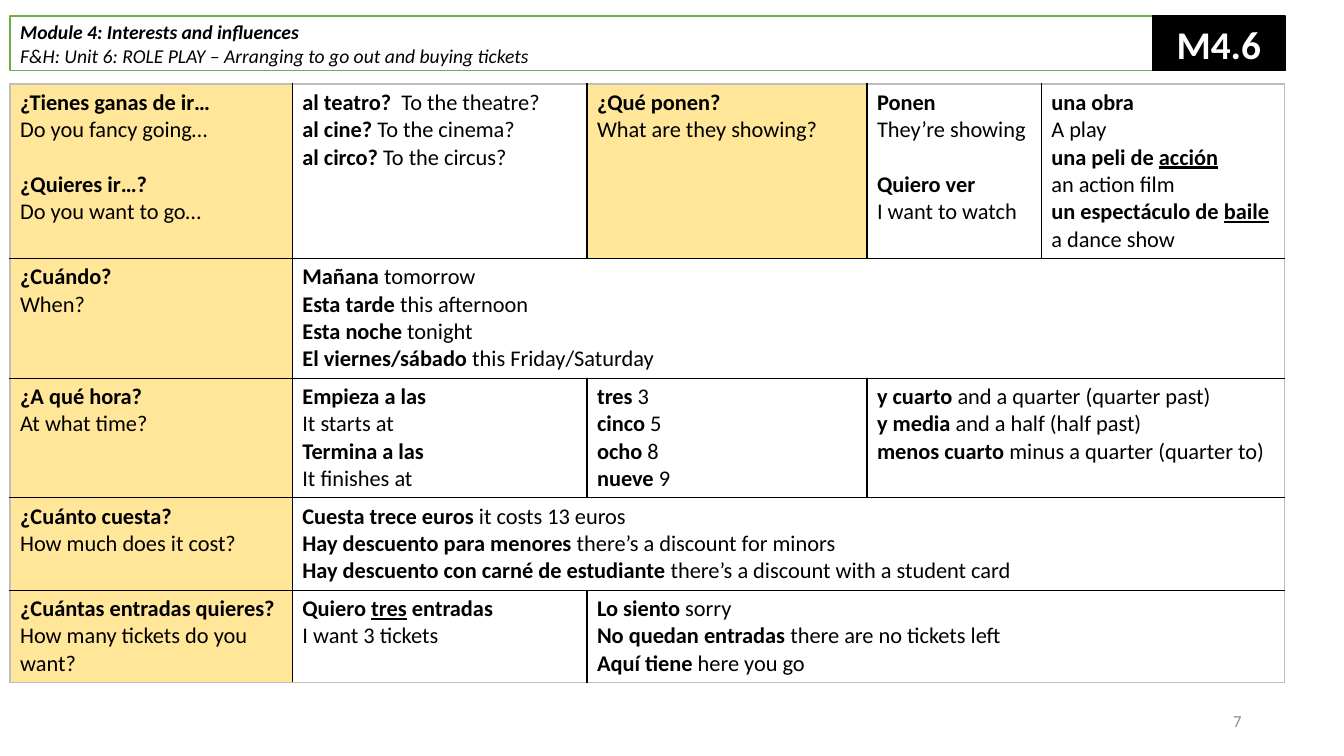
from lxml import etree
from pptx import Presentation
from pptx.dml.color import RGBColor
from pptx.enum.shapes import MSO_SHAPE
from pptx.enum.text import MSO_ANCHOR, MSO_AUTO_SIZE, PP_ALIGN
from pptx.oxml.ns import qn
from pptx.util import Pt

LEFT, CENTER, RIGHT = PP_ALIGN.LEFT, PP_ALIGN.CENTER, PP_ALIGN.RIGHT
MIDDLE = MSO_ANCHOR.MIDDLE
NO_AUTOFIT = MSO_AUTO_SIZE.NONE
RECTANGLE = MSO_SHAPE.RECTANGLE

BLACK = RGBColor(0x00, 0x00, 0x00)
WHITE = RGBColor(0xFF, 0xFF, 0xFF)
GREEN = RGBColor(0x70, 0xAD, 0x47)
YELLOW = RGBColor(0xFF, 0xE6, 0x99)
SILVER = RGBColor(0xBF, 0xBF, 0xBF)
GREY = RGBColor(0x8C, 0x8C, 0x8C)

LINE_GAP = 19.5
COLUMN_WIDTHS = [201.6, 210.5, 200, 124.5, 174]
ROW_HEIGHTS = [124.5, 85.5, 85.5, 66, 66]
PHRASES = [
    [
        (1, YELLOW, "*¿Tienes ganas de ir…*|Do you fancy going…||*¿Quieres ir…?*|Do you want to go…"),
        (1, WHITE, "*al teatro? * To the theatre?|*al cine? *To the cinema?|*al circo?* To the circus?"),
        (1, YELLOW, "*¿Qué ponen?*|What are they showing?"),
        (1, WHITE, "*Ponen*|They’re showing||*Quiero ver*|I want to watch"),
        (1, WHITE, "*una obra*|A play|*una peli de _acción_*|an action film"
                   "|*un espectáculo de _baile_*|a dance show"),
    ],
    [
        (1, YELLOW, "*¿Cuándo?*|When?"),
        (4, WHITE, "*Mañana *tomorrow|*Esta tarde* this afternoon|*Esta noche* tonight"
                   "|*El viernes/sábado *this Friday/Saturday"),
    ],
    [
        (1, YELLOW, "*¿A qué hora?*|At what time?"),
        (1, WHITE, "*Empieza a las*|It starts at|*Termina a las*|It finishes at"),
        (1, WHITE, "*tres *3|*cinco *5|*ocho* 8|*nueve *9"),
        (2, WHITE, "*y cuarto* and a quarter (quarter past)|*y media *and a half (half past)"
                   "|*menos cuarto* minus a quarter (quarter to)"),
    ],
    [
        (1, YELLOW, "*¿Cuánto cuesta?*|How much does it cost?"),
        (4, WHITE, "*Cuesta trece euros* it costs 13 euros"
                   "|*Hay descuento para menores* there’s a discount for minors"
                   "|*Hay descuento con carné de estudiante* there’s a discount with a student card"),
    ],
    [
        (1, YELLOW, "*¿Cuántas entradas quieres?*|How many tickets do you want?"),
        (1, WHITE, "*Quiero _tres_ entradas*|I want 3 tickets"),
        (3, WHITE, "*Lo siento* sorry|*No quedan entradas* there are no tickets left"
                   "|*Aquí tiene* here you go"),
    ],
]


class SlideBuilder:
    """Holds the text style and the current slide, and adds elements to it."""

    def __init__(self, slide, font_name):
        """Remember the slide and its font."""
        self.slide = slide
        self.font_name = font_name

    def add_lines(self, frame, text, size, color=BLACK, align=LEFT, italic=False):
        """Add lines split by |, with *bold* and _underlined_ parts."""
        frame.word_wrap = True
        paragraph, gap = frame.paragraphs[0], 0
        for index, line in enumerate(text.split("|")):
            if not line:
                gap = LINE_GAP
                continue
            if index:
                paragraph = frame.add_paragraph()
            paragraph.alignment = align
            paragraph.space_before = Pt(gap)
            gap = 0
            for bold_index, part in enumerate(line.split("*")):
                for underline_index, piece in enumerate(part.split("_")):
                    if piece:
                        run = paragraph.add_run()
                        run.text = piece
                        run.font.color.rgb = color
                        values = {"name": self.font_name, "size": Pt(size), "italic": italic,
                                  "bold": bold_index % 2 == 1, "underline": underline_index % 2 == 1}
                        for name, value in values.items():
                            setattr(run.font, name, value)

    def place(self, shape, box):
        """Place a shape at left, top, width and height, with centred anchoring."""
        for name, value in zip(("left", "top", "width", "height"), box):
            setattr(shape, name, Pt(value))
        shape.text_frame.auto_size = NO_AUTOFIT
        shape.text_frame.vertical_anchor = MIDDLE

    def paint(self, shape, fill, line):
        """Give a shape a solid fill and a thin outline."""
        shape.fill.solid()
        shape.fill.fore_color.rgb = fill
        shape.line.color.rgb = line
        shape.line.width = Pt(1)

    def title(self, box, text, size, line):
        """Format the title placeholder as an outlined banner."""
        shape = self.slide.shapes.title
        self.place(shape, box)
        self.paint(shape, WHITE, line)
        self.add_lines(shape.text_frame, text, size, italic=True)

    def badge(self, box, text, size):
        """Add a black rectangle with white centred text."""
        shape = self.slide.shapes.add_shape(RECTANGLE, *map(Pt, box))
        shape.shadow.inherit = False
        self.place(shape, box)
        self.paint(shape, BLACK, BLACK)
        self.add_lines(shape.text_frame, text, size, WHITE, CENTER)

    def label(self, box, text, size, color, align):
        """Add a plain text box."""
        shape = self.slide.shapes.add_textbox(*map(Pt, box))
        self.place(shape, box)
        self.add_lines(shape.text_frame, text, size, color, align)

    def border(self, cell, edge, color):
        """Draw one edge of a table cell."""
        properties = cell._tc.get_or_add_tcPr()
        line = etree.SubElement(properties, qn(f"a:ln{edge}"), w=str(Pt(1)))
        fill = etree.SubElement(line, qn("a:solidFill"))
        etree.SubElement(fill, qn("a:srgbClr"), val=str(color))

    def table(self, left, top, widths, heights, rows, size):
        """Add a bordered table whose cells are (span, fill, text)."""
        frame = self.slide.shapes.add_table(
            len(heights), len(widths), Pt(left), Pt(top), Pt(sum(widths)), Pt(sum(heights)))
        table = frame.table
        table.first_row = table.horz_banding = False
        for column, width in zip(table.columns, widths):
            column.width = Pt(width)
        for row, height in zip(table.rows, heights):
            row.height = Pt(height)
        for row_index, entries in enumerate(rows):
            first = 0
            for span, fill, text in entries:
                last = first + span - 1
                cell = table.cell(row_index, first)
                if span > 1:
                    cell.merge(table.cell(row_index, last))
                outer = {"L": first == 0, "R": last == len(widths) - 1,
                         "T": row_index == 0, "B": row_index == len(heights) - 1}
                for column_index in range(first, last + 1):
                    part = table.cell(row_index, column_index)
                    for edge, is_outer in outer.items():
                        self.border(part, edge, SILVER if is_outer else BLACK)
                    part.fill.solid()
                    part.fill.fore_color.rgb = fill
                self.add_lines(cell.text_frame, text, size)
                first = last + 1


def main():
    """Build the vocabulary slide and save it."""
    presentation = Presentation()
    presentation.slide_width, presentation.slide_height = Pt(960), Pt(540)
    slide = presentation.slides.add_slide(presentation.slide_layouts[5])
    builder = SlideBuilder(slide, "Calibri")
    builder.title((7.2, 11.5, 910.8, 39),
                  "*Module 4: Interests and influences*"
                  "|F&H: Unit 6: ROLE PLAY – Arranging to go out and buying tickets", 14, GREEN)
    builder.badge((823, 11.5, 95, 39), "*M4.6*", 28)
    builder.table(7.2, 60, COLUMN_WIDTHS, ROW_HEIGHTS, PHRASES, 16)
    builder.label((678, 500.5, 216, 28.8), "7", 12, GREY, RIGHT)
    presentation.save("out.pptx")


if __name__ == "__main__":
    main()
